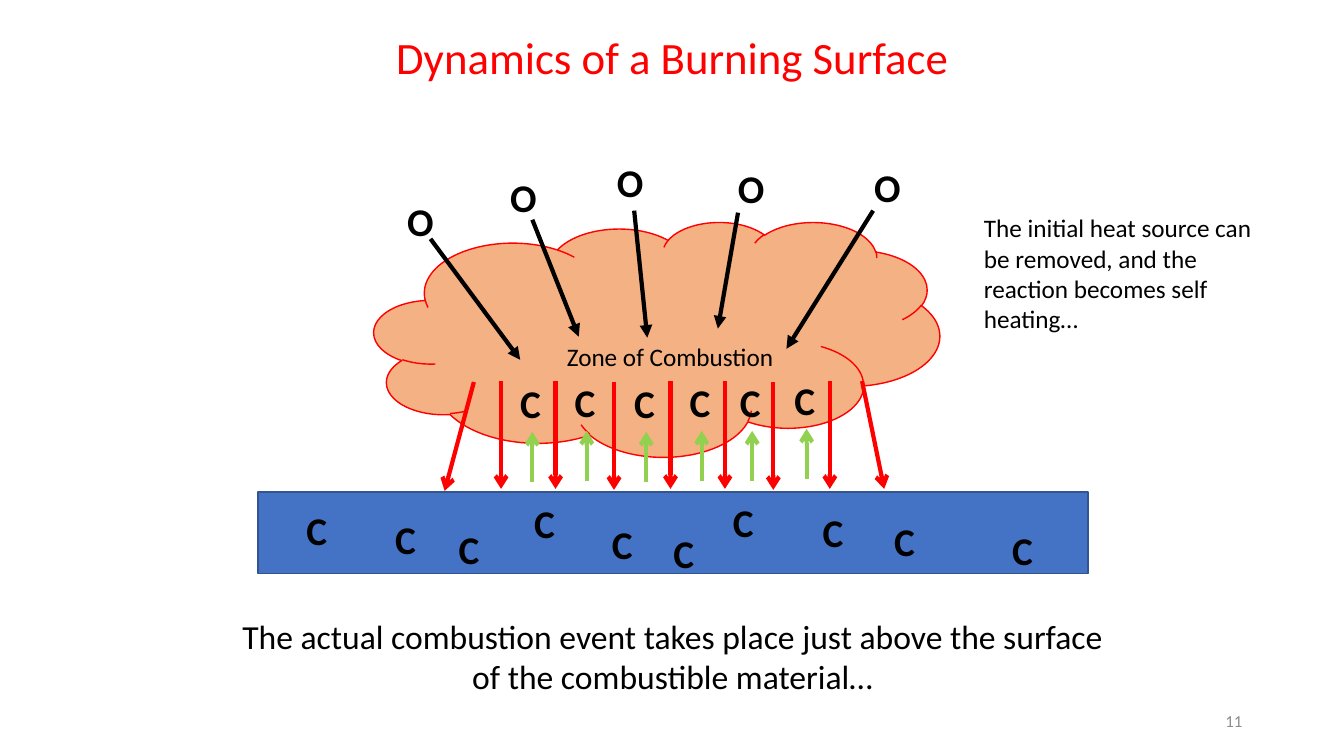
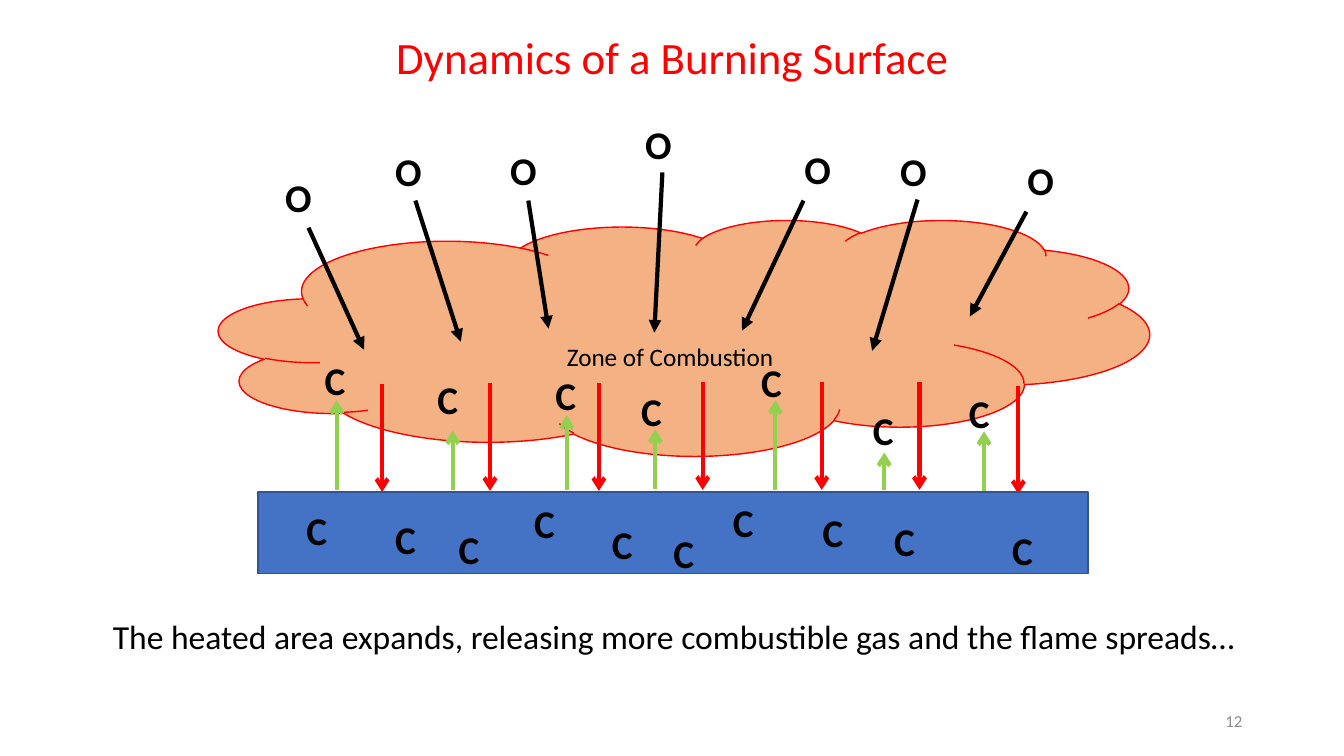
from lxml import etree
from pptx import Presentation
from pptx.dml.color import RGBColor
from pptx.enum.shapes import MSO_CONNECTOR, MSO_SHAPE
from pptx.enum.text import MSO_ANCHOR, PP_ALIGN
from pptx.oxml.ns import qn
from pptx.util import Inches, Pt

RED = RGBColor(0xFF, 0x00, 0x00)
BLACK = RGBColor(0x00, 0x00, 0x00)
GREEN = RGBColor(0x92, 0xD0, 0x50)
PEACH = RGBColor(0xF4, 0xB1, 0x83)
BLUE = RGBColor(0x44, 0x72, 0xC4)
NAVY = RGBColor(0x32, 0x54, 0x91)
GRAY = RGBColor(0x8C, 0x8C, 0x8C)
FONT = "Calibri"
LEFT, MID, RIGHT = PP_ALIGN.LEFT, PP_ALIGN.CENTER, PP_ALIGN.RIGHT
TOP, CORE = MSO_ANCHOR.TOP, MSO_ANCHOR.MIDDLE
CLOUD, RECT = MSO_SHAPE.CLOUD, MSO_SHAPE.RECTANGLE
LINE = MSO_CONNECTOR.STRAIGHT

deck = Presentation()
deck.slide_width = Inches(13.33)
deck.slide_height = Inches(7.5)
ROWS = 75
CELL = deck.slide_height / ROWS
ATOM = (5.5, 5.7)


def write(page, box, text, size, color=BLACK, align=LEFT, anchor=TOP, bold=False):
    frame = page.shapes.add_textbox(*(round(n * CELL) for n in box)).text_frame
    frame.word_wrap = True
    frame.vertical_anchor = anchor
    para = frame.paragraphs[0]
    para.alignment = align
    run = para.add_run()
    run.text = text
    run.font.name = FONT
    run.font.size = Pt(size)
    run.font.bold = bold
    run.font.color.rgb = color
    return para


def arrow(page, ends, color, head):
    link = page.shapes.add_connector(LINE, *(round(n * CELL) for n in ends))
    link.line.color.rgb = color
    link.line.width = Pt(3)
    etree.SubElement(link.get_or_add_ln(), qn("a:tailEnd"), type=head)
    etree.SubElement(link.element.spPr, qn("a:effectLst"))


SLAB = (25.6, 48.8, 82.3, 8.1)
CARBON = [
    (29.4, 49.7), (38.2, 50.6), (44.5, 51.6), (52, 49), (59.7, 51.1),
    (65.8, 52), (71.7, 48.9), (80.6, 49.9), (87.7, 50.8), (99.4, 51.7),
]

SCENES = [
    {
        "page": "11",
        "cloud": (37.1, 22, 56.1, 23.3),
        "heat": [
            (47, 37.9, 44.1, 48.7), (49.7, 37.8, 49.7, 48.5),
            (55.1, 37.8, 55.1, 48.5), (60.9, 37.9, 60.9, 48.6),
            (66.5, 37.8, 66.5, 48.5), (71.9, 37.8, 71.9, 48.5),
            (76.7, 37.9, 76.7, 48.6), (82.3, 37.8, 82.3, 48.5),
            (85.5, 37.8, 87.7, 48.5),
        ],
        "gas": [
            (x, y, x + 2.2, y + 10.7, y + 5.75)
            for x, y in [(50.6, 37.1), (56, 37), (61.9, 37.1),
                         (67.4, 37), (72.4, 37), (77.8, 36.8)]
        ],
        "air": [
            (39.4, 19.1, 42.7, 23.7, 51.6, 35.7),
            (49.6, 16.7, 52.8, 21.8, 57.4, 33.4),
            (60.2, 15.2, 62.9, 20.9, 64.2, 33.5),
            (72.2, 15.8, 73.2, 21.1, 71.2, 32.6),
            (85.7, 15.7, 86.6, 20.9, 78, 34.6),
        ],
        "note": "The initial heat source can be removed, and the reaction becomes self heating…",
        "text": "The actual combustion event takes place just above the surface of the combustible material…",
        "box": (21.7, 60.6, 90, 9.1),
        "align": MID,
    },
    {
        "page": "12",
        "cloud": (21.7, 21.8, 92.3, 23.4),
        "heat": [
            (x, y, x, y + 10.7)
            for x, y in [(37.9, 38.1), (48.6, 38), (59.4, 38), (69.7, 37.9),
                         (81.5, 37.9), (91.2, 37.9), (101, 38.3)]
        ],
        "gas": [
            (31.2, 34.9, 33.4, 48.6, 39.7), (42.4, 36.7, 44.9, 48.6, 42.7),
            (54.1, 36.3, 56.2, 48.6, 41.2), (62.6, 37.9, 65, 48.5, 42.6),
            (74.5, 35.1, 76.9, 48.6, 39.7), (85.6, 39.8, 87.7, 48.6, 44.9),
            (95.1, 38.1, 97.6, 48.7, 42.8),
        ],
        "air": [
            (27.3, 16.7, 30.6, 22.6, 36.1, 34.7),
            (38.2, 14.1, 41.2, 19.9, 45.7, 33.9),
            (49.6, 14, 52.4, 19.9, 54.4, 32.6),
            (63, 11.4, 65.7, 17.1, 64.9, 33),
            (78.8, 13.9, 79.7, 19.9, 73.6, 32.8),
            (88.3, 14.1, 91, 19.8, 86.5, 34.8),
            (100.9, 15, 101.8, 21, 96.2, 31.4),
        ],
        "note": "",
        "text": "The heated area expands, releasing more combustible gas and the flame spreads…",
        "box": (10.2, 60.6, 115.2, 5),
        "align": LEFT,
    },
]

for scene in SCENES:
    page = deck.slides.add_slide(deck.slide_layouts[6])
    for kind, box, fill, edge in [(CLOUD, scene["cloud"], PEACH, RED), (RECT, SLAB, BLUE, NAVY)]:
        if kind == RECT:
            for ends in scene["heat"]:
                arrow(page, ends, RED, "arrow")
        shape = page.shapes.add_shape(kind, *(round(n * CELL) for n in box))
        shape.shadow.inherit = False
        shape.fill.solid()
        shape.fill.fore_color.rgb = fill
        shape.line.color.rgb = edge
        shape.line.width = Pt(1)

    title = write(page, (21.7, 1.9, 90, 8.1), "Dynamics of a Burning Surface", 32, RED, MID, CORE)
    title.line_spacing = 0.9

    for spot in CARBON:
        write(page, spot + ATOM, "C", 28, bold=True)
    for x, y, stem, base, tip in scene["gas"]:
        arrow(page, (stem, base, stem, tip), GREEN, "arrow")
        write(page, (x, y) + ATOM, "C", 28, bold=True)
    for x, y, *ends in scene["air"]:
        write(page, (x, y) + ATOM, "O", 28, bold=True)
        arrow(page, ends, BLACK, "triangle")

    if scene["note"]:
        write(page, (96.6, 20.6, 31.5, 13.1), scene["note"], 18)
    write(page, scene["box"], scene["text"], 24, align=scene["align"])
    write(page, (52, 33.4, 28.9, 4), "Zone of Combustion", 18, align=MID)
    write(page, (94.2, 69.5, 30, 4), scene["page"], 12, GRAY, RIGHT, CORE)

deck.save("out.pptx")
